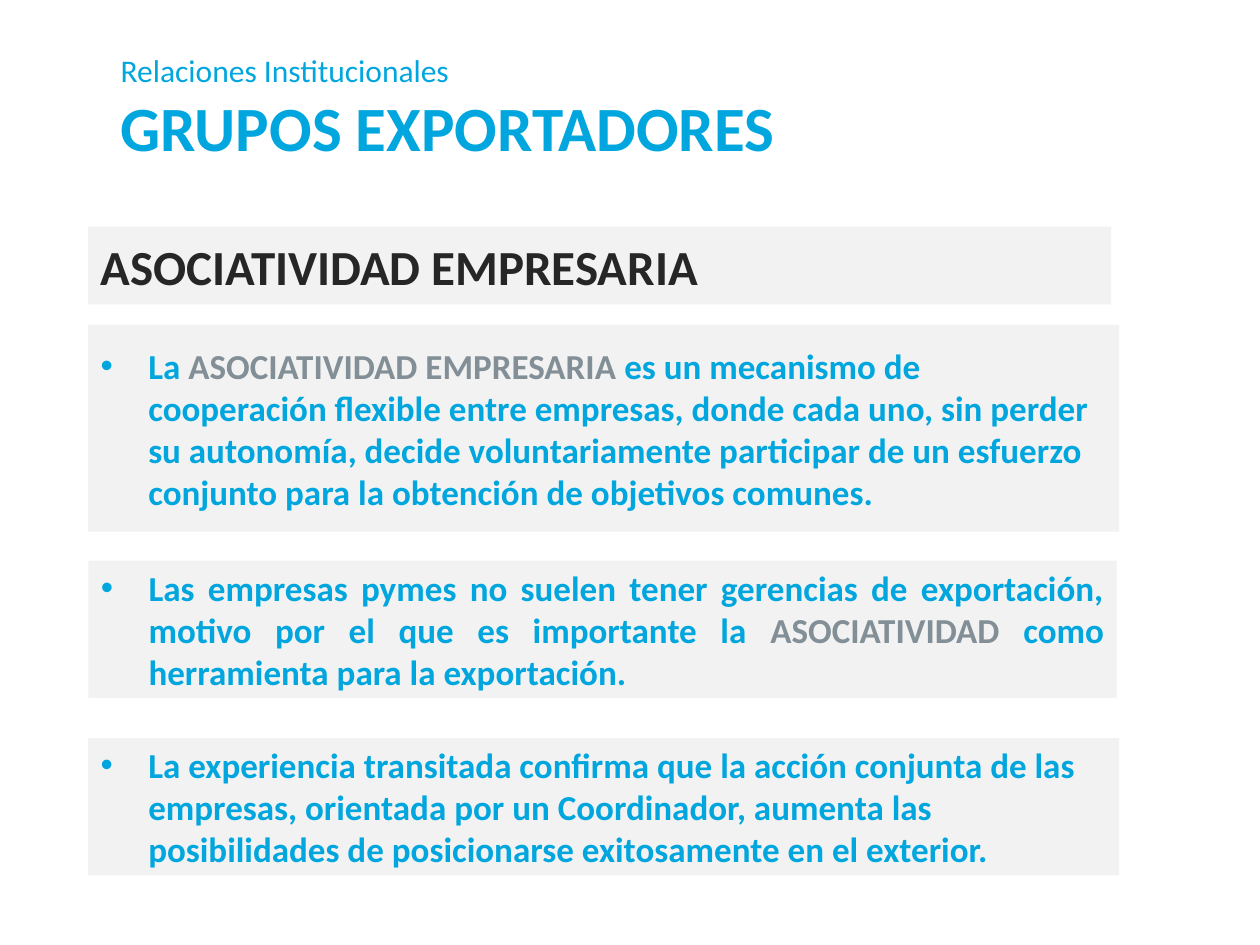
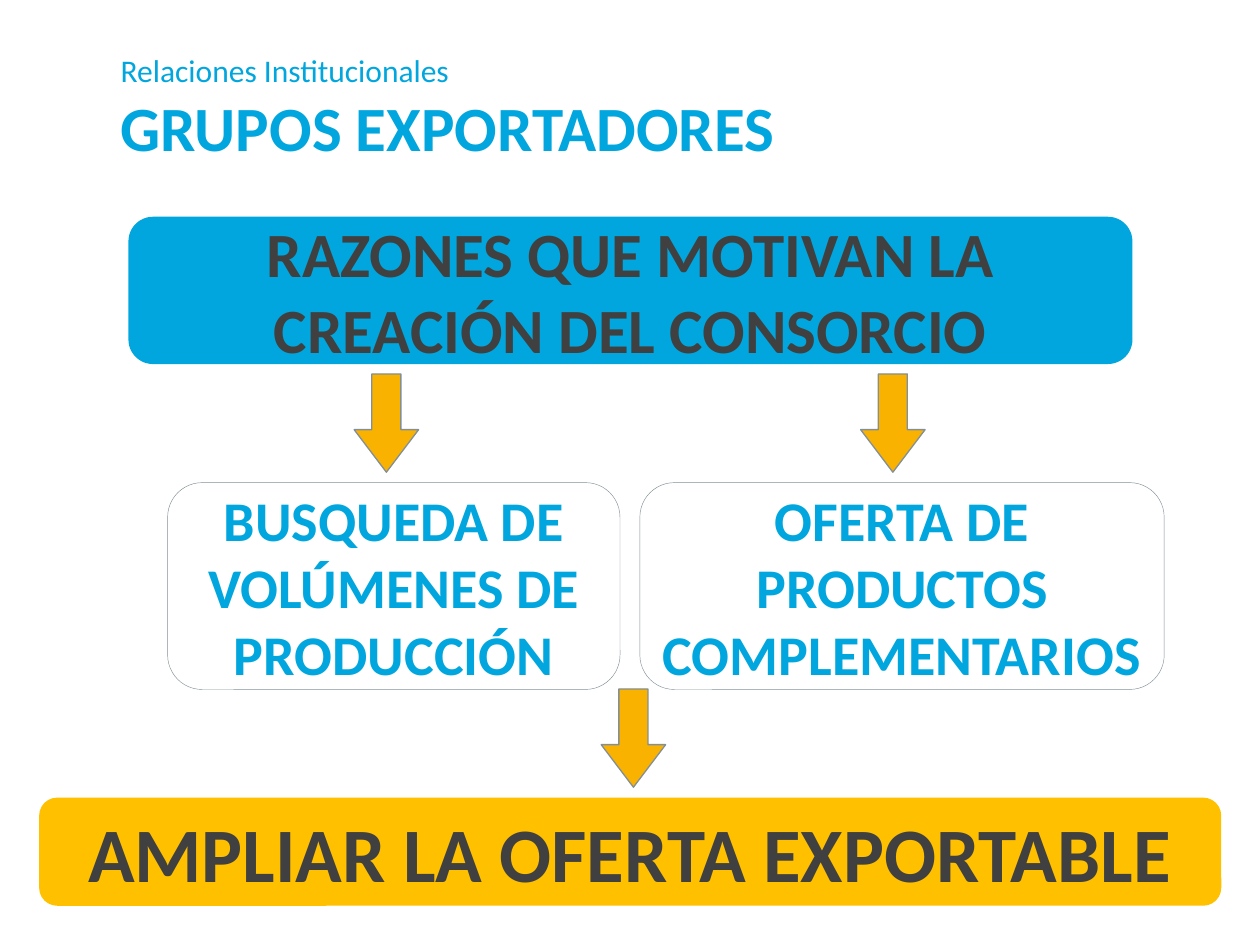
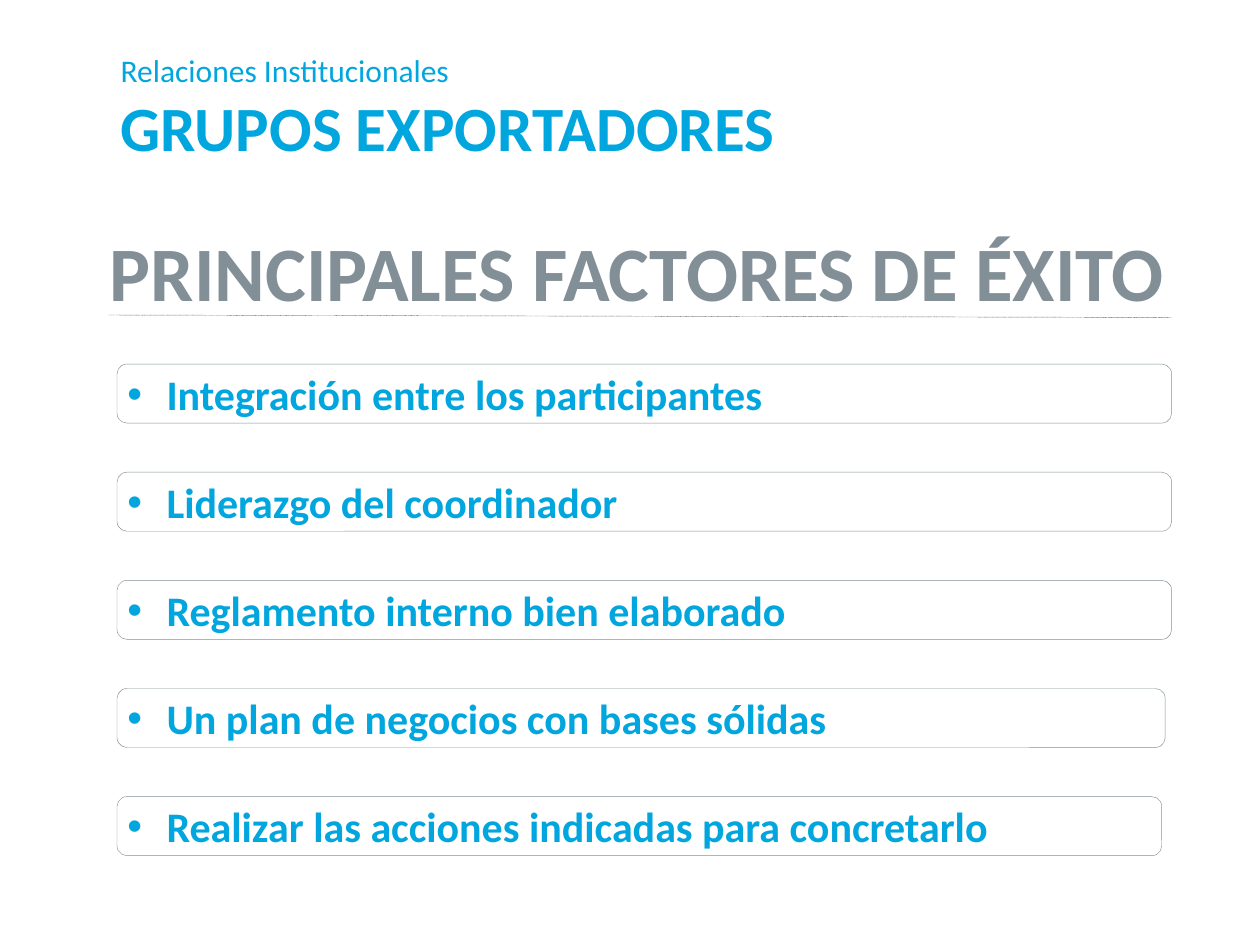
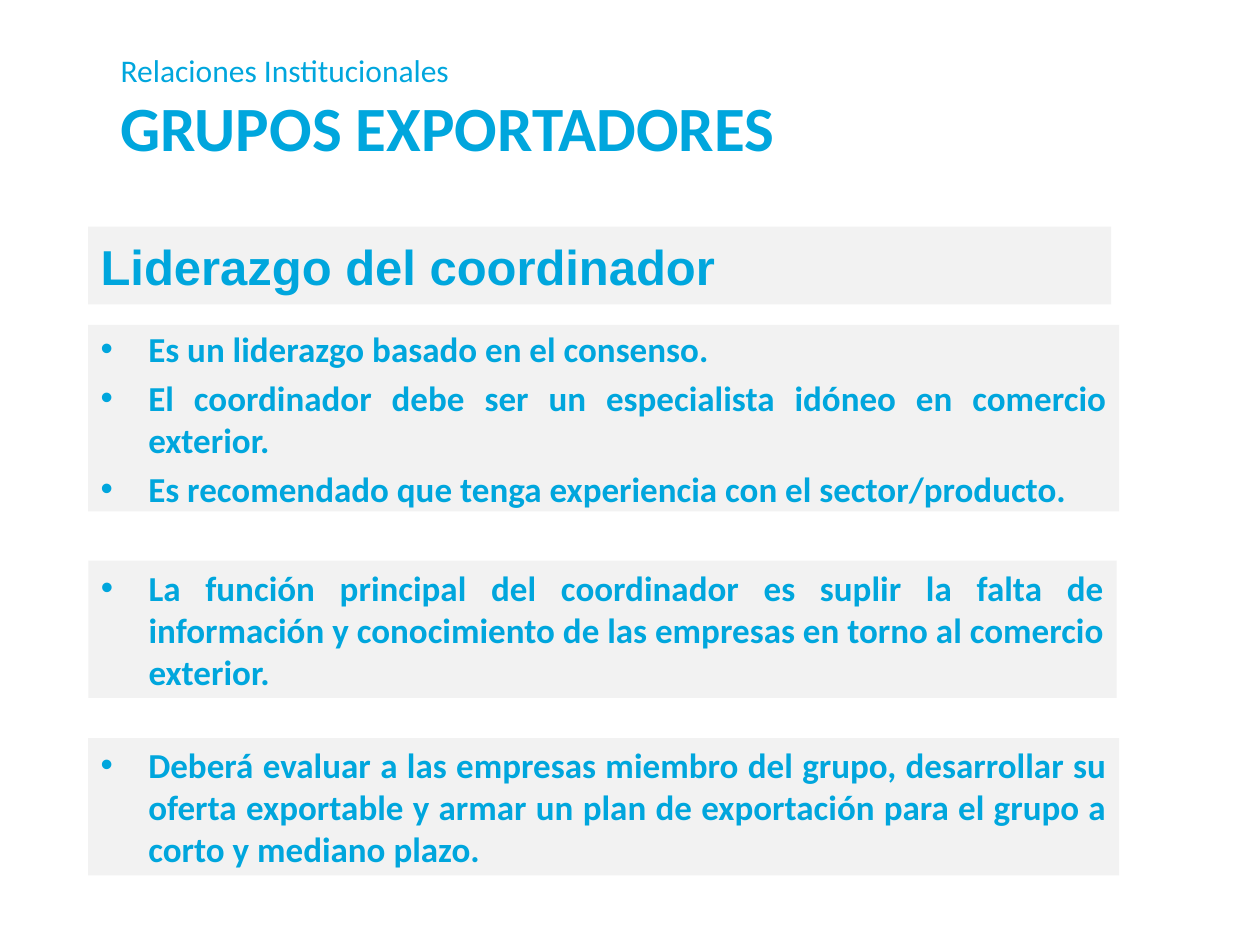
from lxml import etree
from pptx import Presentation
from pptx.dml.color import RGBColor
from pptx.enum.dml import MSO_LINE
from pptx.enum.shapes import MSO_CONNECTOR, MSO_SHAPE
from pptx.enum.text import MSO_ANCHOR, MSO_AUTO_SIZE, PP_ALIGN
from pptx.oxml.ns import qn
from pptx.util import Cm, Pt

LEFT, CENTER, JUSTIFY = PP_ALIGN.LEFT, PP_ALIGN.CENTER, PP_ALIGN.JUSTIFY
RECTANGLE, ROUNDED = MSO_SHAPE.RECTANGLE, MSO_SHAPE.ROUNDED_RECTANGLE
DOWN_ARROW = MSO_SHAPE.DOWN_ARROW

COLORS = {
    "blue": "00A6DD",
    "gray": "828F96",
    "panel": "F2F2F2",
    "black": "262626",
    "dark": "404040",
    "arrow": "F9B200",
    "amber": "FFC000",
    "rule": "595959",
}
FRAME_FORMAT = {
    "word_wrap": True,
    "auto_size": MSO_AUTO_SIZE.NONE,
    "vertical_anchor": MSO_ANCHOR.MIDDLE,
}
ROUNDED_MARGINS = {
    "margin_left": Cm(0.15),
    "margin_right": Cm(0.15),
    "margin_top": Cm(0.13),
    "margin_bottom": Cm(0.13),
}


def style_shape(shape, fill=None, line=None, line_width=0.25):
    """Set fill and outline, with None for a part that is not drawn."""
    if fill:
        shape.fill.solid()
        shape.fill.fore_color.rgb = RGBColor.from_string(COLORS[fill])
    else:
        shape.fill.background()
    if line:
        shape.line.color.rgb = RGBColor.from_string(COLORS[line])
        shape.line.width = Pt(line_width)
    else:
        shape.line.fill.background()


def write_text(shape, paragraphs, size, align=LEFT, indent=None, margins=None, font="Calibri"):
    """Write paragraphs, each a list of (text, color) runs; an indent adds bullets."""
    frame = shape.text_frame
    for name, value in {**FRAME_FORMAT, **(margins or {})}.items():
        setattr(frame, name, value)
    for number, runs in enumerate(paragraphs):
        paragraph = frame.add_paragraph() if number else frame.paragraphs[0]
        paragraph.alignment = align
        paragraph.space_before = Pt(size * 0.2 if number else 0)
        if indent:
            properties = paragraph._p.get_or_add_pPr()
            properties.set("marL", str(Cm(indent)))
            properties.set("indent", str(-Cm(indent)))
            bullet_color = etree.SubElement(properties, qn("a:buClr"))
            etree.SubElement(bullet_color, qn("a:srgbClr"), val=COLORS["blue"])
            etree.SubElement(properties, qn("a:buFont"), typeface="Arial")
            etree.SubElement(properties, qn("a:buChar"), char="•")
        for text, color in runs:
            run = paragraph.add_run()
            run.text = text
            run_format = {"name": font, "size": Pt(size), "bold": True}
            for name, value in run_format.items():
                setattr(run.font, name, value)
            run.font.color.rgb = RGBColor.from_string(COLORS[color])


presentation = Presentation()
presentation.slide_width = Cm(25.4)
presentation.slide_height = Cm(19.05)
CONTENT_LAYOUT = presentation.slide_layouts[1]
TITLE_LAYOUT = presentation.slide_layouts[5]

# Slides with the shared title
slides = []
for layout in (CONTENT_LAYOUT, TITLE_LAYOUT, TITLE_LAYOUT, CONTENT_LAYOUT):
    slide = presentation.slides.add_slide(layout)
    title = slide.shapes.title
    title.left, title.top, title.width, title.height = Cm(2.18), Cm(0.58), Cm(15.09), Cm(3.18)
    for name, value in FRAME_FORMAT.items():
        setattr(title.text_frame, name, value)
    paragraph = title.text_frame.paragraphs[0]
    paragraph.alignment = LEFT
    for text, size, bold in (
        ("Relaciones Institucionales", 18, False),
        ("GRUPOS EXPORTADORES", 36, True),
    ):
        if paragraph.runs:
            paragraph.add_line_break()
        run = paragraph.add_run()
        run.text = text
        for name, value in {"name": "Calibri", "size": Pt(size), "bold": bold}.items():
            setattr(run.font, name, value)
        run.font.color.rgb = RGBColor.from_string(COLORS["blue"])
    slides.append(slide)
association_slide, reasons_slide, factors_slide, leadership_slide = slides

# Slides 1 and 4: heading and three gray panels, the middle one in the body placeholder
association_panels = [
    (4.17, LEFT, [[
        ("La ", "blue"),
        ("ASOCIATIVIDAD EMPRESARIA ", "gray"),
        ("es un mecanismo de cooperación flexible entre empresas, donde cada uno, "
         "sin perder su autonomía, decide voluntariamente participar de un esfuerzo "
         "conjunto para la obtención de objetivos comunes.", "blue"),
    ]]),
    (2.77, JUSTIFY, [[
        ("Las empresas pymes no suelen tener gerencias de exportación, motivo por "
         "el que es importante la ", "blue"),
        ("ASOCIATIVIDAD ", "gray"),
        ("como herramienta para la exportación.", "blue"),
    ]]),
    (2.77, LEFT, [[
        ("La experiencia transitada confirma que la acción conjunta de las empresas, "
         "orientada por un Coordinador, aumenta las posibilidades de posicionarse "
         "exitosamente en el exterior.", "blue"),
    ]]),
]
leadership_panels = [
    (3.76, JUSTIFY, [
        [("Es un liderazgo basado en el consenso.", "blue")],
        [("El coordinador debe ser un especialista idóneo en comercio exterior.", "blue")],
        [("Es recomendado que tenga experiencia con el sector/producto.", "blue")],
    ]),
    (2.77, JUSTIFY, [[
        ("La función principal del coordinador es suplir la falta de información y "
         "conocimiento de las empresas en torno al comercio exterior.", "blue"),
    ]]),
    (2.77, JUSTIFY, [[
        ("Deberá evaluar a las empresas miembro del grupo, desarrollar su oferta "
         "exportable y armar un plan de exportación para el grupo a corto y mediano "
         "plazo.", "blue"),
    ]]),
]
panel_places = ((6.55, 20.78), (11.3, 20.73), (14.88, 20.78))

for slide, heading_text, heading_color, heading_font, panels in (
    (association_slide, "ASOCIATIVIDAD EMPRESARIA", "black", "Calibri", association_panels),
    (leadership_slide, "Liderazgo del coordinador", "blue", "Arial", leadership_panels),
):
    heading = slide.shapes.add_shape(RECTANGLE, Cm(1.78), Cm(4.57), Cm(20.62), Cm(1.57))
    heading.shadow.inherit = False
    style_shape(heading, fill="panel")
    write_text(heading, [[(heading_text, heading_color)]], 28, font=heading_font)

    body = slide.placeholders[1]
    for number, (height, align, paragraphs) in enumerate(panels):
        top, width = panel_places[number]
        place = Cm(1.78), Cm(top), Cm(width), Cm(height)
        if number == 1:
            panel = body
            panel.left, panel.top, panel.width, panel.height = place
        else:
            panel = slide.shapes.add_shape(RECTANGLE, *place)
            panel.shadow.inherit = False
        style_shape(panel, fill="panel")
        write_text(panel, paragraphs, 20, align, indent=0.96)

# Slide 2: reasons leading to the goal
for left, top, width, height, text, size, color, fill, line in (
    (2.59, 4.37, 20.24, 2.97, "RAZONES QUE MOTIVAN LA CREACIÓN DEL CONSORCIO",
     36, "dark", "blue", None),
    (3.38, 9.73, 9.12, 4.17, "BUSQUEDA DE VOLÚMENES DE PRODUCCIÓN",
     32, "blue", None, "gray"),
    (12.9, 9.73, 10.57, 4.17, "OFERTA DE PRODUCTOS COMPLEMENTARIOS",
     32, "blue", None, "gray"),
    (0.79, 16.08, 23.83, 2.18, "AMPLIAR LA OFERTA EXPORTABLE",
     44, "dark", "amber", None),
):
    box = reasons_slide.shapes.add_shape(ROUNDED, Cm(left), Cm(top), Cm(width), Cm(height))
    box.shadow.inherit = False
    style_shape(box, fill, line)
    write_text(box, [[(text, color)]], size, CENTER, margins=ROUNDED_MARGINS)

for left, top in ((7.14, 7.54), (17.35, 7.54), (12.12, 13.89)):
    arrow = reasons_slide.shapes.add_shape(DOWN_ARROW, Cm(left), Cm(top), Cm(1.3), Cm(1.98))
    arrow.shadow.inherit = False
    arrow.adjustments[0] = 0.45
    arrow.adjustments[1] = 0.66
    style_shape(arrow, "arrow", "gray", 0.75)

# Slide 3: heading, dotted rule and list of success factors
heading = factors_slide.shapes.add_shape(ROUNDED, Cm(1.98), Cm(4.57), Cm(22.02), Cm(1.78))
heading.shadow.inherit = False
style_shape(heading)
write_text(heading, [[("PRINCIPALES FACTORES DE ÉXITO", "gray")]], 44, margins=ROUNDED_MARGINS)

rule = factors_slide.shapes.add_connector(
    MSO_CONNECTOR.STRAIGHT, Cm(2.18), Cm(6.35), Cm(23.62), Cm(6.4)
)
rule.line.color.rgb = RGBColor.from_string(COLORS["rule"])
rule.line.width = Pt(0.25)
rule.line.dash_style = MSO_LINE.ROUND_DOT
etree.SubElement(rule._element.spPr, qn("a:effectLst"))

for number, (text, width) in enumerate((
    ("Integración entre los participantes", 21.26),
    ("Liderazgo del coordinador", 21.26),
    ("Reglamento interno bien elaborado", 21.26),
    ("Un plan de negocios con bases sólidas", 21.13),
    ("Realizar las acciones indicadas para concretarlo", 21.06),
)):
    factor = factors_slide.shapes.add_shape(
        ROUNDED, Cm(2.36), Cm(7.34 + 2.18 * number), Cm(width), Cm(1.19)
    )
    factor.shadow.inherit = False
    style_shape(factor, line="gray")
    write_text(factor, [[(text, "blue")]], 24, indent=0.79, margins=ROUNDED_MARGINS)

presentation.save("out.pptx")
